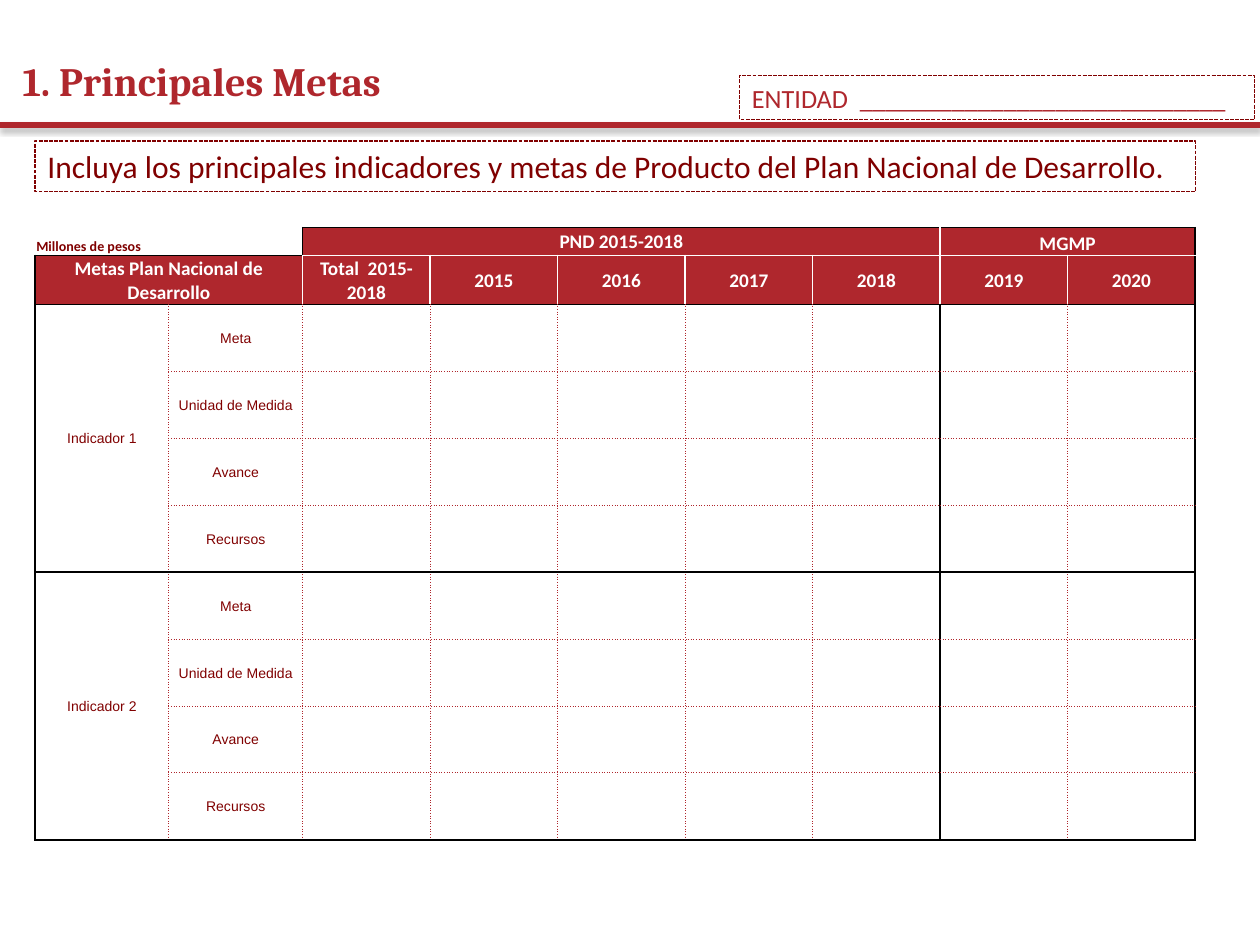
import pptx
import pptx.util
import pptx.dml.color
import pptx.enum.dml
import pptx.enum.shapes
import pptx.enum.text
import pptx.oxml
import pptx.oxml.ns

Pt = pptx.util.Pt
RGBColor = pptx.dml.color.RGBColor
Anchor = pptx.enum.text.MSO_ANCHOR
Align = pptx.enum.text.PP_ALIGN

RED = RGBColor(0xAF, 0x27, 0x2D)
MAROON = RGBColor(0x80, 0x00, 0x00)
BLACK = RGBColor(0, 0, 0)
WHITE = RGBColor(0xFF, 0xFF, 0xFF)

SOLID_BLACK = (BLACK, 1, "solid")
SOLID_WHITE = (WHITE, 1, "solid")
DOTTED_RED = (RED, 0.5, "dot")

HEADER = {"size": Pt(11), "name": "Calibri", "bold": True, "color": WHITE}
LABEL = {"size": Pt(8), "name": "Arial", "bold": False, "color": MAROON}
UNITS = {"size": Pt(8), "name": "Calibri", "bold": True, "color": MAROON}
TITLE = {"size": Pt(23), "name": "Cambria", "bold": True, "color": RED}
NOTICE = {"size": Pt(18), "name": "Calibri", "bold": False, "color": MAROON}
ENTITY = {"size": Pt(15), "name": "Calibri", "bold": False, "color": RED}

YEARS = ["2015", "2016", "2017", "2018", "2019", "2020"]
MEASURES = ["Meta", "Unidad de Medida", "Avance", "Recursos"]
GROUP_STARTS = (2, 6)
ROW_COUNT, COLUMN_COUNT = 10, 9


def apply_formats(target, formats):
    for name, value in formats.items():
        if name == "color":
            target.color.rgb = value
        else:
            setattr(target, name, value)


def write(text_frame, text, formats, alignment=Align.LEFT):
    paragraph = text_frame.paragraphs[0]
    paragraph.alignment = alignment
    run = paragraph.add_run()
    run.text = text
    apply_formats(run.font, formats)


def add_title(slide, left, top, width, height):
    text_frame = slide.shapes.add_textbox(Pt(left), Pt(top), Pt(width), Pt(height)).text_frame
    apply_formats(text_frame, {"word_wrap": True, "vertical_anchor": Anchor.MIDDLE})
    write(text_frame, "1. Principales Metas", TITLE)


def add_rule(slide, left, top, width):
    rule = slide.shapes.add_connector(
        pptx.enum.shapes.MSO_CONNECTOR.STRAIGHT, Pt(left), Pt(top), Pt(left + width), Pt(top))
    apply_formats(rule.line, {"width": Pt(3), "color": RED})
    rule._element.spPr.append(pptx.oxml.parse_xml(
        f'<a:effectLst {pptx.oxml.ns.nsdecls("a")}>'
        f'<a:outerShdw blurRad="{Pt(3.1)}" dist="{Pt(1.8)}" dir="5400000" rotWithShape="0">'
        '<a:srgbClr val="000000"><a:alpha val="35000"/></a:srgbClr>'
        '</a:outerShdw></a:effectLst>'))


def add_dashed_box(slide, left, top, width, height, text, formats):
    box = slide.shapes.add_shape(
        pptx.enum.shapes.MSO_SHAPE.RECTANGLE, Pt(left), Pt(top), Pt(width), Pt(height))
    box.shadow.inherit = False
    box.fill.background()
    apply_formats(box.line, {
        "width": Pt(0.75), "color": MAROON,
        "dash_style": pptx.enum.dml.MSO_LINE.SQUARE_DOT})
    apply_formats(box.text_frame, {
        "word_wrap": True, "vertical_anchor": Anchor.TOP,
        "auto_size": pptx.enum.text.MSO_AUTO_SIZE.SHAPE_TO_FIT_TEXT})
    write(box.text_frame, text, formats)


def vertical_border(row, boundary):
    if row == 0:
        return {2: SOLID_BLACK, 7: SOLID_WHITE, 9: SOLID_BLACK}.get(boundary)
    if row == 1:
        return SOLID_BLACK if boundary in (0, 9) else SOLID_WHITE
    return SOLID_BLACK if boundary in (0, 7, 9) else DOTTED_RED


def horizontal_border(boundary, column):
    if boundary == 0:
        return SOLID_BLACK if column >= 2 else None
    if boundary == 1:
        return SOLID_BLACK if column < 2 else SOLID_WHITE
    return SOLID_BLACK if boundary in (2, 6, 10) else DOTTED_RED


def set_border(cell, side, border):
    namespace = pptx.oxml.ns.nsdecls("a")
    if border is None:
        xml = f'<a:{side} {namespace} w="0"><a:noFill/></a:{side}>'
    else:
        color, width, dash = border
        xml = (f'<a:{side} {namespace} w="{Pt(width)}"><a:solidFill><a:srgbClr val="{color}"/>'
               f'</a:solidFill><a:prstDash val="{dash}"/></a:{side}>')
    cell._tc.get_or_add_tcPr().append(pptx.oxml.parse_xml(xml))


def format_cell(cell, row, column):
    apply_formats(cell, {
        "margin_left": Pt(0.72), "margin_right": Pt(0.72), "margin_top": Pt(0.72),
        "margin_bottom": 0, "vertical_anchor": Anchor.MIDDLE})
    if cell.is_spanned:
        return
    bottom = row + (cell.span_height if cell.is_merge_origin else 1)
    right = column + (cell.span_width if cell.is_merge_origin else 1)
    set_border(cell, "lnL", vertical_border(row, column))
    set_border(cell, "lnR", vertical_border(row, right))
    set_border(cell, "lnT", horizontal_border(row, column))
    set_border(cell, "lnB", horizontal_border(bottom, column))
    if row == 1 or (row == 0 and column >= 2):
        cell.fill.solid()
        cell.fill.fore_color.rgb = RED
    else:
        cell.fill.background()


def add_goals_table(slide, left, top, width, height):
    table = slide.shapes.add_table(
        ROW_COUNT, COLUMN_COUNT, Pt(left), Pt(top), Pt(width), Pt(height)).table
    apply_formats(table, {"first_row": False, "horz_banding": False})

    label_width, header_heights = 76.5, (16, 28)
    year_width = (width - 2 * label_width) / 7
    body_height = (height - sum(header_heights)) / 8
    for index, column in enumerate(table.columns):
        column.width = Pt(label_width if index < 2 else year_width)
    for index, row in enumerate(table.rows):
        row.height = Pt(header_heights[index] if index < 2 else body_height)

    spans = [(0, 0, 0, 1), (0, 2, 0, 6), (0, 7, 0, 8), (1, 0, 1, 1)]
    spans += [(start, 0, start + 3, 0) for start in GROUP_STARTS]
    for first_row, first_column, last_row, last_column in spans:
        table.cell(first_row, first_column).merge(table.cell(last_row, last_column))

    for row in range(ROW_COUNT):
        for column in range(COLUMN_COUNT):
            format_cell(table.cell(row, column), row, column)

    headers = {(0, 2): "PND 2015-2018", (0, 7): "MGMP",
               (1, 0): "Metas Plan Nacional de Desarrollo", (1, 2): "Total  2015-2018"}
    headers.update({(1, column): year for column, year in enumerate(YEARS, 3)})
    labels = {}
    for number, start in enumerate(GROUP_STARTS, 1):
        labels[start, 0] = f"Indicador {number}"
        labels.update({(row, 1): measure for row, measure in enumerate(MEASURES, start)})
    for texts, formats in ((headers, HEADER), (labels, LABEL)):
        for position, text in texts.items():
            write(table.cell(*position).text_frame, text, formats, Align.CENTER)
    write(table.cell(0, 0).text_frame, "Millones de pesos", UNITS)
    for column in (0, 7):
        table.cell(0, column).vertical_anchor = Anchor.BOTTOM


def main():
    presentation = pptx.Presentation()
    presentation.slide_width, presentation.slide_height = Pt(720), Pt(540)
    slide = presentation.slides.add_slide(presentation.slide_layouts[6])
    add_rule(slide, 0, 71.5, 720)
    add_dashed_box(
        slide, 20, 80.6, 663, 29,
        "Incluya los principales indicadores y metas de Producto del Plan Nacional de Desarrollo.",
        NOTICE)
    add_title(slide, 5.8, 26, 598, 40)
    add_goals_table(slide, 20, 130, 663, 350)
    add_dashed_box(
        slide, 422.6, 43.2, 294.5, 25.2, "ENTIDAD  ____________________________", ENTITY)
    presentation.save("out.pptx")


if __name__ == "__main__":
    main()
